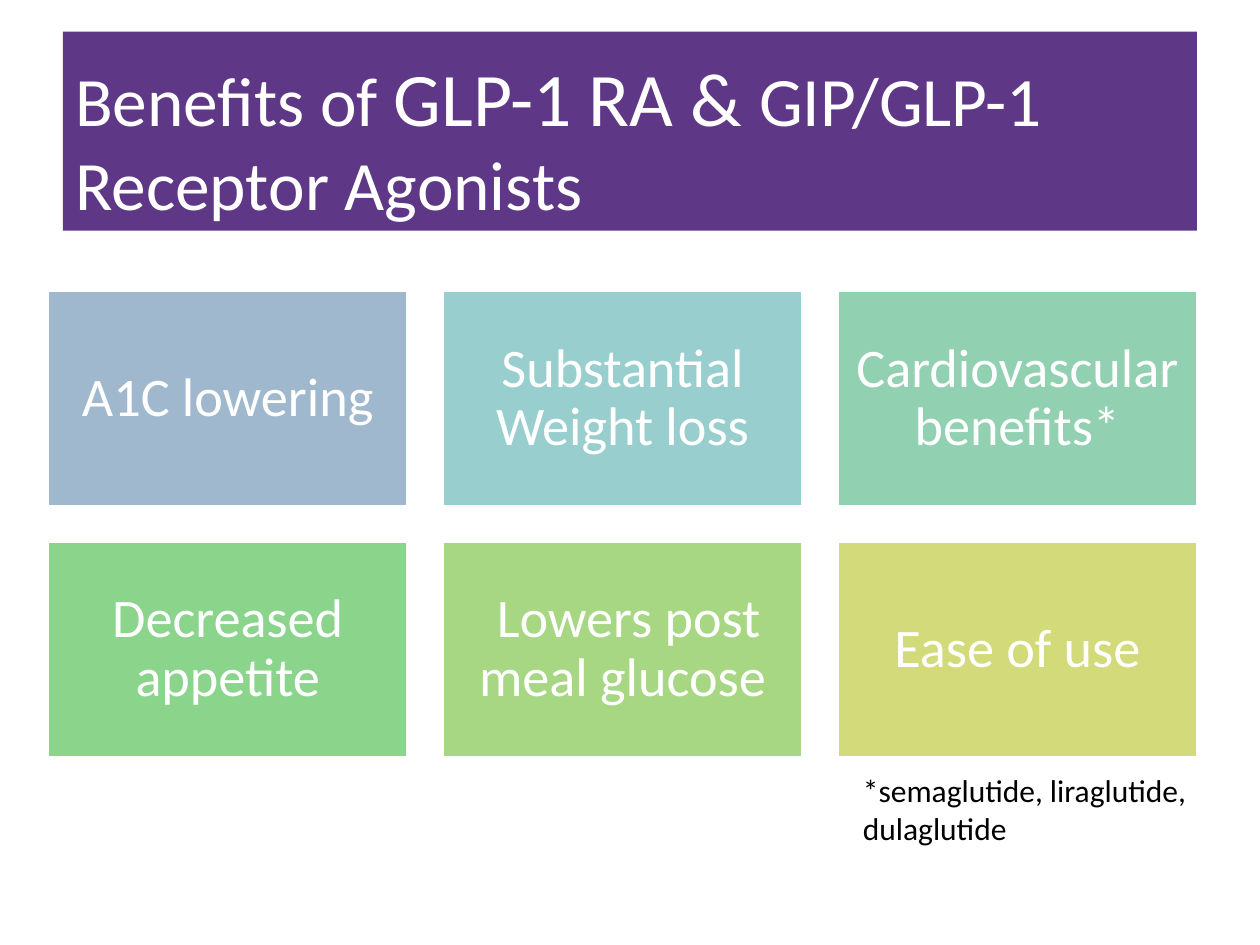
from dataclasses import dataclass

import pptx
import pptx.dml.color
import pptx.enum.shapes
import pptx.enum.text
import pptx.util

Inches = pptx.util.Inches
Pt = pptx.util.Pt
RGB = pptx.dml.color.RGBColor.from_string
Align = pptx.enum.text.PP_ALIGN
Anchor = pptx.enum.text.MSO_ANCHOR


@dataclass(frozen=True)
class Theme:
    """Colours and type sizes of the deck."""
    font: str = "Calibri"
    white: str = "FFFFFF"
    black: str = "000000"
    banner: str = "5E3886"
    title_size: float = 39.6
    emphasis_size: float = 43.2
    card_size: float = 31
    note_size: float = 18


THEME = Theme()

TITLE = [
    ("Benefits of ", THEME.title_size),
    ("GLP-1 RA & ", THEME.emphasis_size),
    ("GIP/GLP-1 Receptor Agonists", THEME.title_size),
]

BENEFITS = [
    ("A1C lowering", "9FB8CD"),
    ("Substantial Weight loss", "98CFCE"),
    ("Cardiovascular benefits*", "91D1B2"),
    ("Decreased appetite", "8AD48C"),
    (" Lowers post meal glucose", "A7D782"),
    ("Ease of use", "D2DA7A"),
]


def add_panel(page, left, top, width, height, fill):
    """Add a flat filled rectangle with wrapping text and return it."""
    panel = page.shapes.add_shape(
        pptx.enum.shapes.MSO_SHAPE.RECTANGLE, left, top, width, height)
    panel.shadow.inherit = False
    panel.fill.solid()
    panel.fill.fore_color.rgb = RGB(fill)
    panel.line.fill.background()
    panel.text_frame.word_wrap = True
    return panel


def style_font(font, color, size=None):
    """Set the theme typeface, a colour and optionally a size."""
    font.name = THEME.font
    font.color.rgb = RGB(color)
    if size:
        font.size = Pt(size)


def add_title(page, left, top, width, height):
    """Add the title banner with its mixed text sizes."""
    banner = add_panel(page, left, top, width, height, THEME.banner)
    banner.text_frame.vertical_anchor = Anchor.BOTTOM
    para = banner.text_frame.paragraphs[0]
    para.alignment = Align.LEFT
    style_font(para.font, THEME.white)
    for text, size in TITLE:
        span = para.add_run()
        span.text = text
        style_font(span.font, THEME.white, size)


def add_card(page, left, top, width, height, text, fill):
    """Add one benefit card with centred text."""
    card = add_panel(page, left, top, width, height, fill)
    card.line.color.rgb = RGB(THEME.white)
    card.line.width = Pt(1.5)
    frame = card.text_frame
    frame.margin_left = frame.margin_right = Inches(0.13)
    frame.margin_top = frame.margin_bottom = Inches(0.13)
    frame.vertical_anchor = Anchor.MIDDLE
    para = frame.paragraphs[0]
    para.text = text
    para.alignment = Align.CENTER
    para.line_spacing = 0.9
    style_font(para.font, THEME.white, THEME.card_size)


def add_benefits(page, left, top, width, height, columns=3):
    """Lay the benefit cards out in an evenly spaced grid."""
    gap = Inches(0.28)
    rows = len(BENEFITS) // columns
    card_width = (width - gap * (columns - 1)) // columns
    card_height = (height - gap * (rows - 1)) // rows
    for index, (text, fill) in enumerate(BENEFITS):
        row, column = divmod(index, columns)
        add_card(page, left + column * (card_width + gap),
                 top + row * (card_height + gap),
                 card_width, card_height, text, fill)


def add_note(page, left, top, width, height):
    """Add the footnote naming the medicines."""
    box = page.shapes.add_textbox(left, top, width, height)
    box.text_frame.word_wrap = True
    para = box.text_frame.paragraphs[0]
    para.text = "*semaglutide, liraglutide, dulaglutide"
    style_font(para.font, THEME.black, THEME.note_size)


def main():
    """Build the slide and save the deck."""
    deck = pptx.Presentation()
    deck.slide_width = Inches(10)
    deck.slide_height = Inches(7.5)
    page = deck.slides.add_slide(deck.slide_layouts[6])
    add_title(page, Inches(0.5), Inches(0.25), Inches(9), Inches(1.58))
    add_benefits(page, Inches(0.38), Inches(2.31), Inches(9.12), Inches(3.7))
    add_note(page, Inches(6.75), Inches(6.07), Inches(2.95), Inches(0.71))
    deck.save("out.pptx")


if __name__ == "__main__":
    main()
